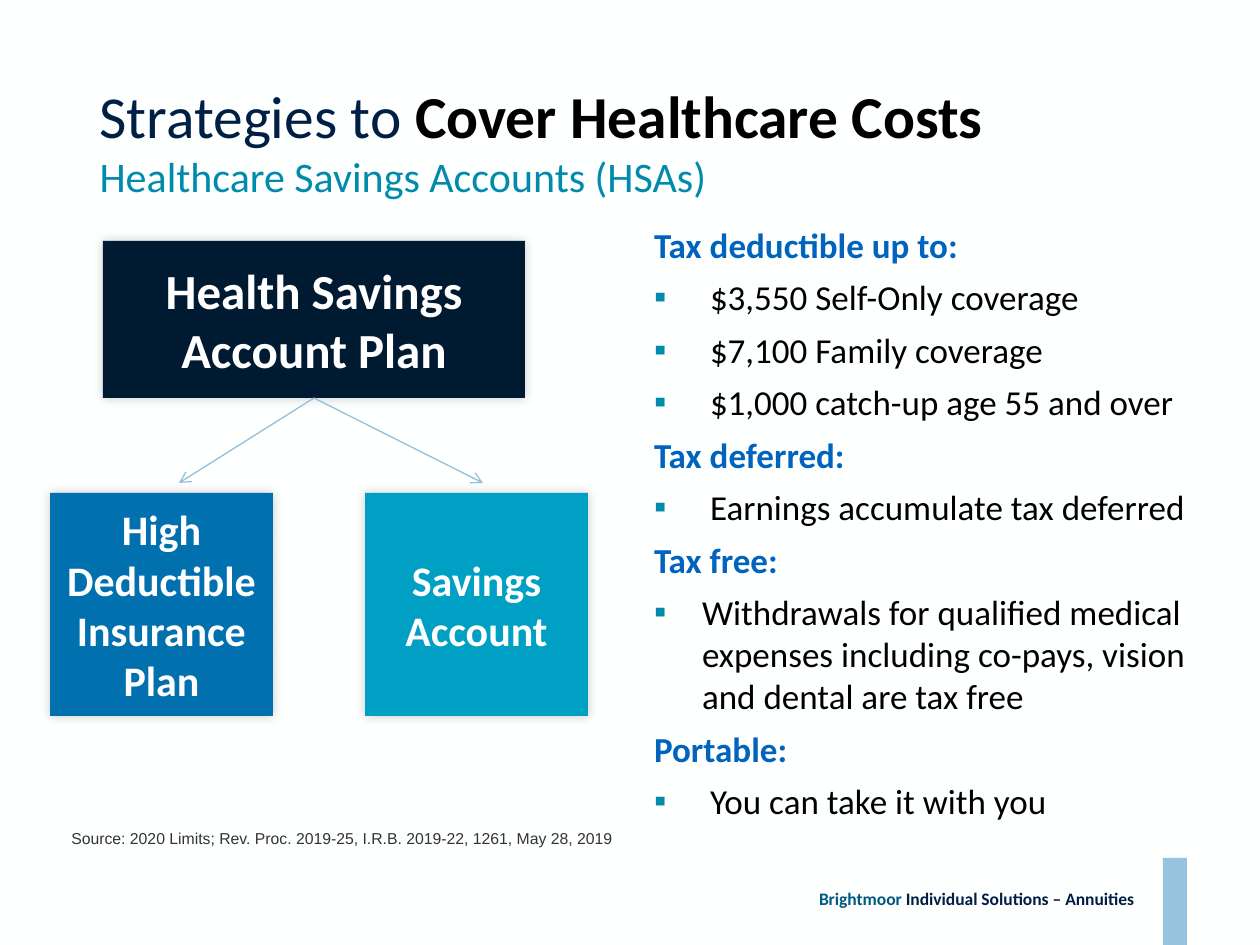
from lxml.etree import SubElement
from pptx import Presentation
from pptx.dml.color import RGBColor
from pptx.enum.shapes import MSO_CONNECTOR as Connector, MSO_SHAPE as Shape
from pptx.enum.text import MSO_ANCHOR as Anchor, MSO_AUTO_SIZE as AutoSize, PP_ALIGN as Align
from pptx.oxml.ns import qn
from pptx.util import Emu, Pt

PX_PER_INCH = 126
NAVY, TEAL, BLUE, BLACK = "001F45", "008BAC", "0063BD", "000000"

BENEFITS = [
    ("Tax deductible up to:", [
        "$3,550 Self-Only coverage",
        "$7,100 Family coverage",
        "$1,000 catch-up age 55 and over",
    ]),
    ("Tax deferred:", ["Earnings accumulate tax deferred"]),
    ("Tax free:", [
        "Withdrawals for qualified medical expenses including co-pays, "
        "vision and dental are tax free",
    ]),
    ("Portable:", ["You can take it with you"]),
]


def px(length):
    return Emu(round(length * 914400 / PX_PER_INCH))


def color(hex_code):
    return RGBColor.from_string(hex_code)


def style_font(font, size, hex_code, bold=False, name="Calibri"):
    font.name = name
    font.size = Pt(size)
    font.bold = bold
    font.color.rgb = color(hex_code)


def add_run(paragraph, text, size, hex_code, bold=False):
    run = paragraph.add_run()
    run.text = text
    style_font(run.font, size, hex_code, bold)


def place(shape, box):
    shape.left, shape.top, shape.width, shape.height = map(px, box)


def set_insets(frame, inset):
    frame.margin_left = frame.margin_right = px(inset)
    frame.margin_top = frame.margin_bottom = px(inset)


def add_rectangle(slide, box, fill):
    shape = slide.shapes.add_shape(Shape.RECTANGLE, *map(px, box))
    shape.shadow.inherit = False
    shape.fill.solid()
    shape.fill.fore_color.rgb = color(fill)
    shape.line.fill.background()
    return shape


def add_soft_shadow(shape):
    effects = shape._element.spPr.find(qn("a:effectLst"))
    shadow = SubElement(effects, qn("a:outerShdw"), blurRad=str(Pt(6)),
                        dist="0", dir="18900000", algn="ctr", rotWithShape="0")
    shade = SubElement(shadow, qn("a:srgbClr"), val=BLACK)
    SubElement(shade, qn("a:alpha"), val="20000")


def add_plan_box(slide, box, fill, lines, size):
    shape = add_rectangle(slide, box, fill)
    add_soft_shadow(shape)
    frame = shape.text_frame
    frame.word_wrap = True
    frame.vertical_anchor = Anchor.MIDDLE
    frame.text = "\n".join(lines)
    for paragraph in frame.paragraphs:
        paragraph.alignment = Align.CENTER
        style_font(paragraph.font, size, "FFFFFF", bold=True)
    return shape


def add_arrow(slide, source, end):
    arrow = slide.shapes.add_connector(Connector.STRAIGHT, 0, 0, *map(px, end))
    arrow.begin_connect(source, 2)
    arrow.line.color.rgb = color("93BFDB")
    arrow.line.width = Pt(0.75)
    SubElement(arrow.line._get_or_add_ln(), qn("a:tailEnd"), type="arrow")
    SubElement(arrow._element.spPr, qn("a:effectLst"))


def add_text_box(slide, box):
    frame = slide.shapes.add_textbox(*map(px, box)).text_frame
    frame.word_wrap = True
    return frame


def set_bullet(paragraph, indent):
    properties = paragraph._p.get_or_add_pPr()
    properties.set("marL", str(px(indent)))
    properties.set("indent", str(-px(indent)))
    if not indent:
        SubElement(properties, qn("a:buNone"))
        return
    bullet_color = SubElement(properties, qn("a:buClr"))
    SubElement(bullet_color, qn("a:srgbClr"), val=TEAL)
    SubElement(properties, qn("a:buFont"), typeface="Arial")
    SubElement(properties, qn("a:buChar"), char="▪")


def fill_title(title):
    place(title, (87, 73, 1144, 147))
    frame = title.text_frame
    frame.auto_size = AutoSize.NONE
    frame.vertical_anchor = Anchor.TOP
    paragraph = frame.paragraphs[0]
    paragraph.alignment = Align.LEFT
    style_font(paragraph.font, 34, NAVY)
    add_run(paragraph, "Strategies to ", 34, NAVY)
    add_run(paragraph, "Cover Healthcare Costs", 34, BLACK, bold=True)
    paragraph.add_line_break()
    add_run(paragraph, "Healthcare Savings Accounts (HSAs)", 24, TEAL)


def fill_benefits(body):
    place(body, (654, 223, 554, 673))
    frame = body.text_frame
    frame.auto_size = AutoSize.NONE
    set_insets(frame, 0)
    rows = []
    for heading, items in BENEFITS:
        rows.append((heading, 0, BLUE))
        # One-line items sit slightly further in than the wrapped one
        rows += [(item, 48 if len(item) > 40 else 56, BLACK) for item in items]
    frame.text = "\n".join(text for text, _, _ in rows)
    for paragraph, (_, indent, hex_code) in zip(frame.paragraphs, rows):
        set_bullet(paragraph, indent)
        paragraph.space_before = Pt(0)
        paragraph.space_after = Pt(6)
        style_font(paragraph.font, 20, hex_code, bold=not indent)


def add_footer(slide):
    add_rectangle(slide, (1163, 858, 24, 87), "98C3DE")
    frame = add_text_box(slide, (795, 852, 339, 93))
    set_insets(frame, 0)
    frame.vertical_anchor = Anchor.MIDDLE
    paragraph = frame.paragraphs[0]
    paragraph.alignment = Align.RIGHT
    add_run(paragraph, "Brightmoor", 10, "005883", bold=True)
    add_run(paragraph, " Individual Solutions – Annuities", 10, NAVY, bold=True)


def add_plan_diagram(slide):
    plan = add_plan_box(slide, (103, 241, 422, 157), "001A31",
                        ["Health Savings Account Plan"], 28)
    add_plan_box(slide, (50, 493, 223, 223), "0071AE",
                 ["High", "Deductible", "Insurance", "Plan"], 24)
    add_plan_box(slide, (365, 493, 223, 223), "009FC4", ["Savings Account"], 24)
    for end_x in (179, 483):
        add_arrow(slide, plan, (end_x, 483))


def add_source_note(slide):
    frame = add_text_box(slide, (59, 823, 746, 32))
    frame.text = "Source: 2020 Limits; Rev. Proc. 2019-25, I.R.B. 2019-22, 1261, May 28, 2019"
    style_font(frame.paragraphs[0].font, 9, "333333", name="Arial")


def main():
    presentation = Presentation()
    presentation.slide_width, presentation.slide_height = px(1260), px(945)
    slide = presentation.slides.add_slide(presentation.slide_layouts[1])
    slide.background.fill.solid()
    slide.background.fill.fore_color.rgb = color("FEFFFF")

    # Title and list
    fill_title(slide.shapes.title)
    fill_benefits(slide.placeholders[1])

    # Diagram, note and footer
    add_plan_diagram(slide)
    add_source_note(slide)
    add_footer(slide)

    presentation.save("out.pptx")


if __name__ == "__main__":
    main()
